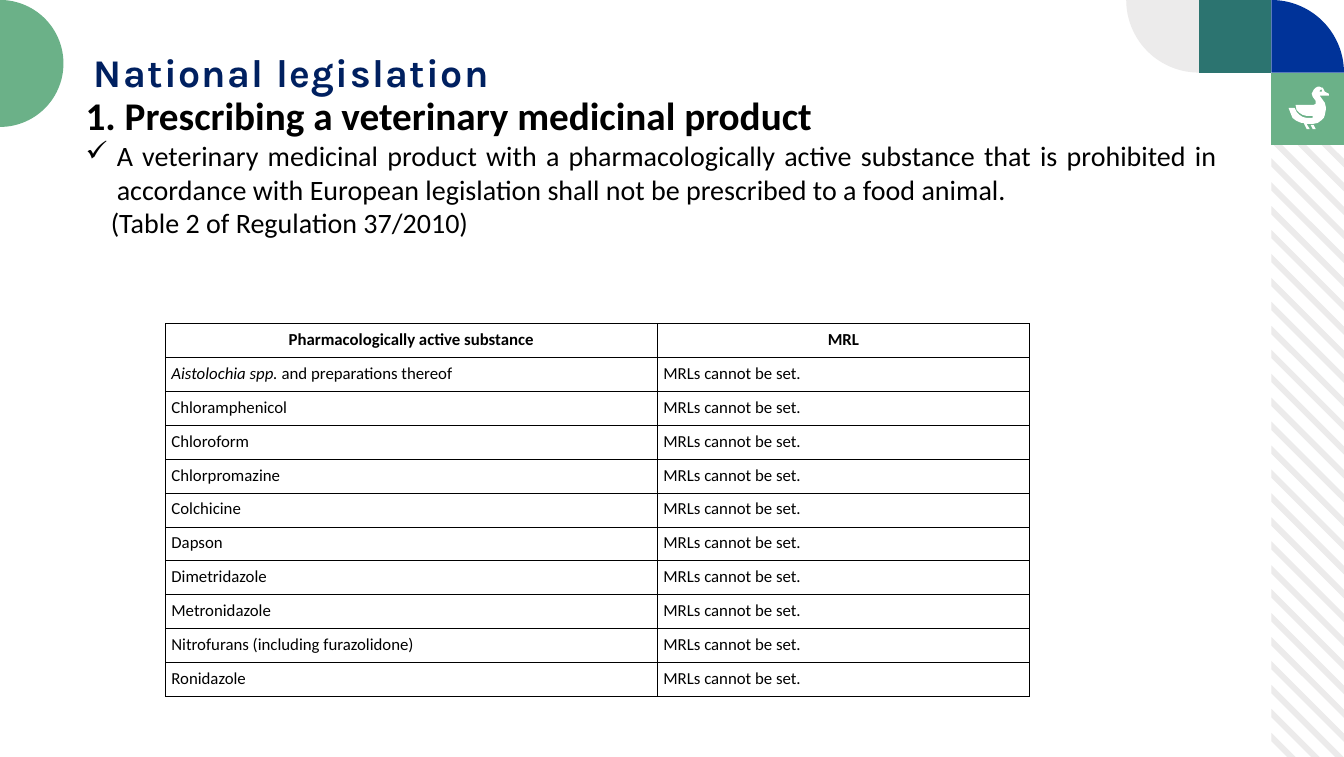
from math import cos, radians, sin

from lxml.etree import SubElement
from pptx import Presentation
from pptx.dml.color import RGBColor
from pptx.enum.text import PP_ALIGN as ALIGN
from pptx.oxml.ns import qn
from pptx.util import Inches, Pt

WHITE = RGBColor(0xFF, 0xFF, 0xFF)
BLACK = RGBColor(0, 0, 0)
NAVY = RGBColor(0x00, 0x20, 0x60)
BLUE = RGBColor(0x00, 0x33, 0x99)
TEAL = RGBColor(0x2C, 0x74, 0x70)
GREEN = RGBColor(0x6B, 0xB1, 0x88)
GREY = RGBColor(0xEC, 0xEB, 0xEB)

TITLE = "National legislation"
HEADING = "1. Prescribing a veterinary medicinal product"
RULE = ("A veterinary medicinal product with a pharmacologically active substance that is "
        "prohibited in accordance with European legislation shall not be prescribed to a food animal.")
REFERENCE = "(Table 2 of Regulation 37/2010)"
HEADER = ("Pharmacologically active substance", "MRL")
LATIN_NAME = "Aistolochia spp."
SUBSTANCES = [
    LATIN_NAME + " and preparations thereof", "Chloramphenicol", "Chloroform",
    "Chlorpromazine", "Colchicine", "Dapson", "Dimetridazole", "Metronidazole",
    "Nitrofurans (including furazolidone)", "Ronidazole",
]
LIMIT = "MRLs cannot be set."
COLUMNS = (4.88, 3.69)
ROW_H = 3.7 / 11

DUCK_FOOT = [(13.05, 1.28), (13.03, 1.24), (13, 1.24), (13.02, 1.28)]
DUCK_BODY = [
    (13.18, 0.93), (13.14, 0.91), (13.13, 0.89), (13.12, 0.87), (13.11, 0.87), (13.11, 0.91),
    (13.1, 0.91), (13.09, 0.91), (13.09, 0.9), (13.1, 0.89), (13.11, 0.89), (13.11, 0.9),
    (13.11, 0.87), (13.09, 0.86), (13.07, 0.86), (13.05, 0.87), (13.03, 0.89), (13.02, 0.91),
    (13.01, 0.93), (13.02, 0.96), (13.05, 1), (13.05, 1.03), (13.03, 1.04), (12.85, 1.04),
    (12.86, 1.09), (12.89, 1.12), (12.92, 1.14), (12.96, 1.15), (13.02, 1.15), (13.02, 1.17),
    (12.96, 1.17), (12.92, 1.16), (12.89, 1.14), (12.86, 1.11), (12.84, 1.07), (12.78, 1.07),
    (12.8, 1.12), (12.82, 1.17), (12.86, 1.2), (12.91, 1.22), (12.93, 1.22), (12.96, 1.28),
    (12.99, 1.28), (12.96, 1.23), (13.02, 1.23), (13.07, 1.22), (13.11, 1.19), (13.13, 1.17),
    (13.14, 1.14), (13.15, 1.09), (13.15, 1.06), (13.14, 1.02), (13.09, 0.95), (13.18, 0.95),
]

SLIDE_W, SLIDE_H, TILE = 13.33, 7.51, 0.72
RIGHT_COL = SLIDE_W - TILE
MID_COL = RIGHT_COL - TILE

prs = Presentation()
prs.slide_width, prs.slide_height = Inches(SLIDE_W), Inches(SLIDE_H)
s = prs.slides.add_slide(prs.slide_layouts[6])


def freeform(contours, color):
    first, *others = [[(Inches(x), Inches(y)) for x, y in c] for c in contours]
    fb = s.shapes.build_freeform(*first[0], scale=1.0)
    fb.add_line_segments(first[1:], close=True)
    for points in others:
        fb.move_to(*points[0])
        fb.add_line_segments(points[1:], close=True)
    sp = fb.convert_to_shape()
    sp.shadow.inherit = False
    sp.fill.solid()
    sp.fill.fore_color.rgb = color
    sp.line.fill.background()


def square(x, y):
    return [(x, y), (x + TILE, y), (x + TILE, y + TILE), (x, y + TILE)]


def arc(cx, cy, radius, start, end):
    """Points on a circle, angles in degrees clockwise from the right."""
    return [(cx + radius * cos(radians(a)), cy + radius * sin(radians(a)))
            for a in range(start, end + 1, 3)]


def stripe_edge(y):
    """Ends of a 45-degree line that meets the left side at y, cut to the column."""
    top, shift = 2 * TILE, max(0, 2 * TILE - y)
    run = min(TILE, SLIDE_H - y)
    return [(RIGHT_COL + shift, max(y, top)), (RIGHT_COL + run, y + run)]


def add_text(p, text, size, color=BLACK, font="Calibri", bold=False, italic=False,
             align=None, spacing=None):
    r = p.add_run()
    r.text = text
    f = r.font
    f.size, f.name, f.bold, f.italic = Pt(size), font, bold, italic
    f.color.rgb = color
    if align is not None:
        p.alignment = align
    if spacing:
        r._r.get_or_add_rPr().set("spc", str(spacing))


def indent(p, left, first=0, bullet=None):
    pPr = p._p.get_or_add_pPr()
    pPr.set("marL", str(Inches(left)))
    pPr.set("indent", str(Inches(first)))
    if bullet:
        SubElement(pPr, qn("a:buChar")).set("char", bullet)


def text_box(x, y, w, h):
    tf = s.shapes.add_textbox(Inches(x), Inches(y), Inches(w), Inches(h)).text_frame
    tf.word_wrap = True
    return tf


def style_cell(cell):
    tcPr = cell._tc.get_or_add_tcPr()
    for side in ("lnL", "lnR", "lnT", "lnB"):
        ln = SubElement(tcPr, qn("a:" + side), w=str(Pt(0.5)))
        SubElement(SubElement(ln, qn("a:solidFill")), qn("a:srgbClr")).set("val", str(BLACK))
    cell.fill.solid()
    cell.fill.fore_color.rgb = WHITE
    cell.margin_left = cell.margin_right = cell.margin_top = cell.margin_bottom = Inches(0.06)


# Decoration
stripe_tops = [1.57 + 0.2375 * k for k in range(-3, 25)]
freeform([stripe_edge(y) + stripe_edge(y + 0.083)[::-1] for y in stripe_tops], GREY)
freeform([square(MID_COL, 0)], TEAL)
freeform([square(RIGHT_COL, TILE)], GREEN)
freeform([[(RIGHT_COL, TILE)] + arc(RIGHT_COL, TILE, TILE, 270, 360)], BLUE)
freeform([[(MID_COL, 0)] + arc(MID_COL, 0, TILE, 90, 180)], GREY)
freeform([DUCK_FOOT, DUCK_BODY], WHITE)
freeform([arc(0, 0.63, 0.63, -90, 90)], GREEN)

# Text
p = text_box(0.83, 0.34, 10.35, 0.52).paragraphs[0]
p.line_spacing = 1.2
add_text(p, TITLE, 28, color=NAVY, font="Karla", bold=True, spacing=100)

tf = text_box(0.75, 0.86, 11.42, 6.6)
add_text(tf.paragraphs[0], HEADING, 28, bold=True)
p = tf.add_paragraph()
indent(p, 0.31, -0.31, bullet="✓")
add_text(p, RULE, 20, align=ALIGN.JUSTIFY)
p = tf.add_paragraph()
indent(p, 0.25)
add_text(p, REFERENCE, 20, align=ALIGN.JUSTIFY)

# Table
rows = [HEADER] + [(name, LIMIT) for name in SUBSTANCES]
table = s.shapes.add_table(len(rows), len(COLUMNS), Inches(1.64), Inches(3.21),
                           Inches(sum(COLUMNS)), Inches(ROW_H * len(rows))).table
table.first_row = table.horz_banding = False
for column, width in zip(table.columns, COLUMNS):
    column.width = Inches(width)
for i, row in enumerate(rows):
    table.rows[i].height = Inches(ROW_H)
    for j, text in enumerate(row):
        cell = table.cell(i, j)
        style_cell(cell)
        p = cell.text_frame.paragraphs[0]
        if text.startswith(LATIN_NAME):
            add_text(p, LATIN_NAME, 12, italic=True)
            text = text.removeprefix(LATIN_NAME)
        add_text(p, text, 12, bold=i == 0, align=ALIGN.CENTER if i == 0 else ALIGN.LEFT)

prs.save("out.pptx")
